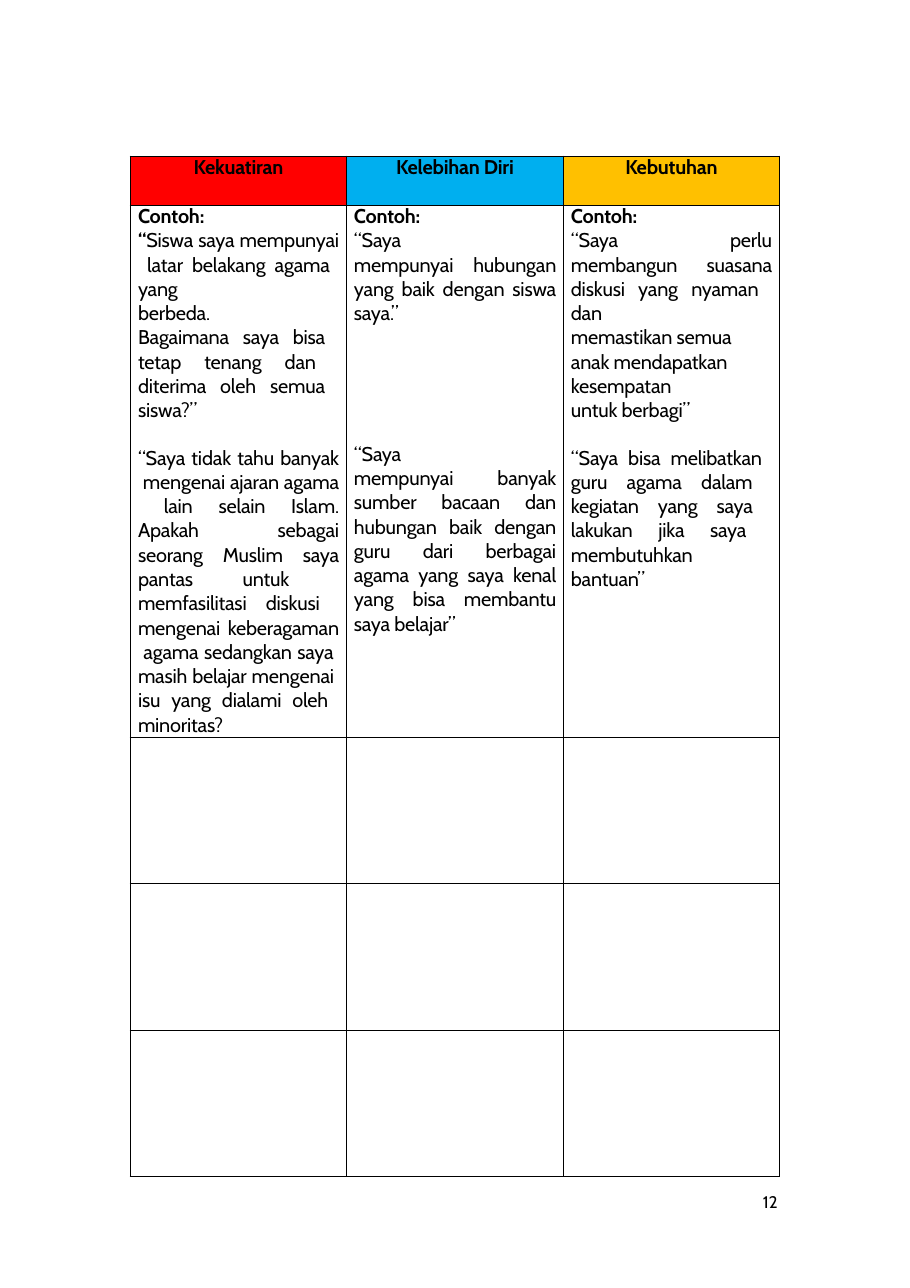
from lxml import etree
from pptx import Presentation
from pptx.dml.color import RGBColor
from pptx.enum.text import PP_ALIGN
from pptx.oxml.ns import qn
from pptx.util import Pt

CENTER, JUSTIFY, LEFT = PP_ALIGN.CENTER, PP_ALIGN.JUSTIFY, PP_ALIGN.LEFT
PX = 8298
FONT = "Cabin"
COLORS = {"ink": "000000", "red": "FF0000", "blue": "00AFEF", "gold": "FFC000"}

HEADS = [("Kekuatiran", "red"), ("Kelebihan Diri", "blue"), ("Kebutuhan", "gold")]
TIGHT, LOOSE = Pt(15.3), 1.01
LABEL = (LEFT, 0, TIGHT, [("Contoh:", True)])
NOTES = [
    [
        LABEL,
        (JUSTIFY, 0, LOOSE, [
            ("“", True),
            ("Siswa saya mempunyai\n latar belakang agama \nyang\nberbeda.", False)]),
        (JUSTIFY, 0, LOOSE, [
            ("Bagaimana saya bisa \ntetap tenang dan \n"
             "diterima oleh semua \nsiswa?”", False)]),
        (JUSTIFY, 15, LOOSE, [
            ("“Saya tidak tahu banyak\n mengenai ajaran agama\n lain selain Islam.\n"
             "Apakah sebagai\nseorang Muslim saya\npantas untuk \n"
             "memfasilitasi diskusi \nmengenai keberagaman\n agama sedangkan saya \n"
             "masih belajar mengenai \nisu yang dialami oleh \nminoritas?", False)]),
    ],
    [
        LABEL,
        (JUSTIFY, 0, LOOSE, [
            ("“Saya\nmempunyai hubungan yang baik dengan siswa saya.”", False)]),
        (JUSTIFY, 76, LOOSE, [
            ("“Saya\nmempunyai banyak sumber bacaan dan hubungan baik dengan "
             "guru dari berbagai\nagama yang saya kenal yang bisa membantu "
             "saya belajar”", False)]),
    ],
    [
        LABEL,
        (JUSTIFY, 0, LOOSE, [
            ("“Saya perlu\nmembangun suasana\ndiskusi yang nyaman \ndan", False)]),
        (LEFT, 0, LOOSE, [
            ("memastikan semua\nanak mendapatkan\nkesempatan\nuntuk berbagi”", False)]),
        (JUSTIFY, 15, LOOSE, [
            ("“Saya bisa melibatkan \nguru agama dalam \nkegiatan yang saya \n"
             "lakukan jika saya \nmembutuhkan\nbantuan”", False)]),
    ],
]
PAGE = "12"
WIDTHS = [216, 217, 216]
HEIGHTS = [49, 531, 146, 147, 146]
LEFT_X, TOP_Y = 130, 156


def add_text(para, text, size, bold=False, track=0):
    for i, line in enumerate(text.split("\n")):
        if i:
            para.add_line_break()
        run = para.add_run()
        run.text = line
        font = run.font
        font.name, font.size, font.bold = FONT, Pt(size), bold
        font.color.rgb = RGBColor.from_string(COLORS["ink"])
        if track:
            run._r.get_or_add_rPr().set("spc", str(track))


def add_edges(cell):
    props = cell._tc.get_or_add_tcPr()
    for side in ("a:lnL", "a:lnR", "a:lnT", "a:lnB"):
        line = etree.SubElement(props, qn(side), w=str(Pt(0.5)))
        fill = etree.SubElement(line, qn("a:solidFill"))
        etree.SubElement(fill, qn("a:srgbClr"), val=COLORS["ink"])


def fill_cell(cell, paras):
    frame = cell.text_frame
    for i, (align, gap, pitch, runs) in enumerate(paras):
        para = frame.add_paragraph() if i else frame.paragraphs[0]
        para.alignment = align
        para.line_spacing = pitch
        para.space_before = Pt(gap)
        for text, bold in runs:
            add_text(para, text, 13, bold, -10)


def add_grid(slide):
    frame = slide.shapes.add_table(
        len(HEIGHTS), len(WIDTHS), LEFT_X * PX, TOP_Y * PX,
        sum(WIDTHS) * PX, sum(HEIGHTS) * PX)
    table = frame.table
    table.first_row = table.horz_banding = False
    for col, width in zip(table.columns, WIDTHS):
        col.width = width * PX
    for row, height in zip(table.rows, HEIGHTS):
        row.height = height * PX
    for cell in table.iter_cells():
        cell.margin_left, cell.margin_right = 8 * PX, 7 * PX
        cell.margin_top = cell.margin_bottom = 0
        add_edges(cell)
        cell.fill.background()
    for i, (head, color) in enumerate(HEADS):
        cell = table.cell(0, i)
        cell.fill.solid()
        cell.fill.fore_color.rgb = RGBColor.from_string(COLORS[color])
        fill_cell(cell, [(CENTER, 0, TIGHT, [(head, True)])])
        fill_cell(table.cell(1, i), NOTES[i])


def add_page(slide):
    box = slide.shapes.add_textbox(763 * PX, 1194 * PX, 24 * PX, 20 * PX)
    frame = box.text_frame
    frame.word_wrap = True
    frame.margin_left = frame.margin_right = 0
    frame.margin_top = frame.margin_bottom = 0
    para = frame.paragraphs[0]
    para.alignment = LEFT
    para.line_spacing = Pt(11.5)
    add_text(para, PAGE, 11)


def main():
    deck = Presentation()
    deck.slide_width, deck.slide_height = 910 * PX, 1288 * PX
    slide = deck.slides.add_slide(deck.slide_layouts[6])
    add_grid(slide)
    add_page(slide)
    deck.save("out.pptx")


if __name__ == "__main__":
    main()
